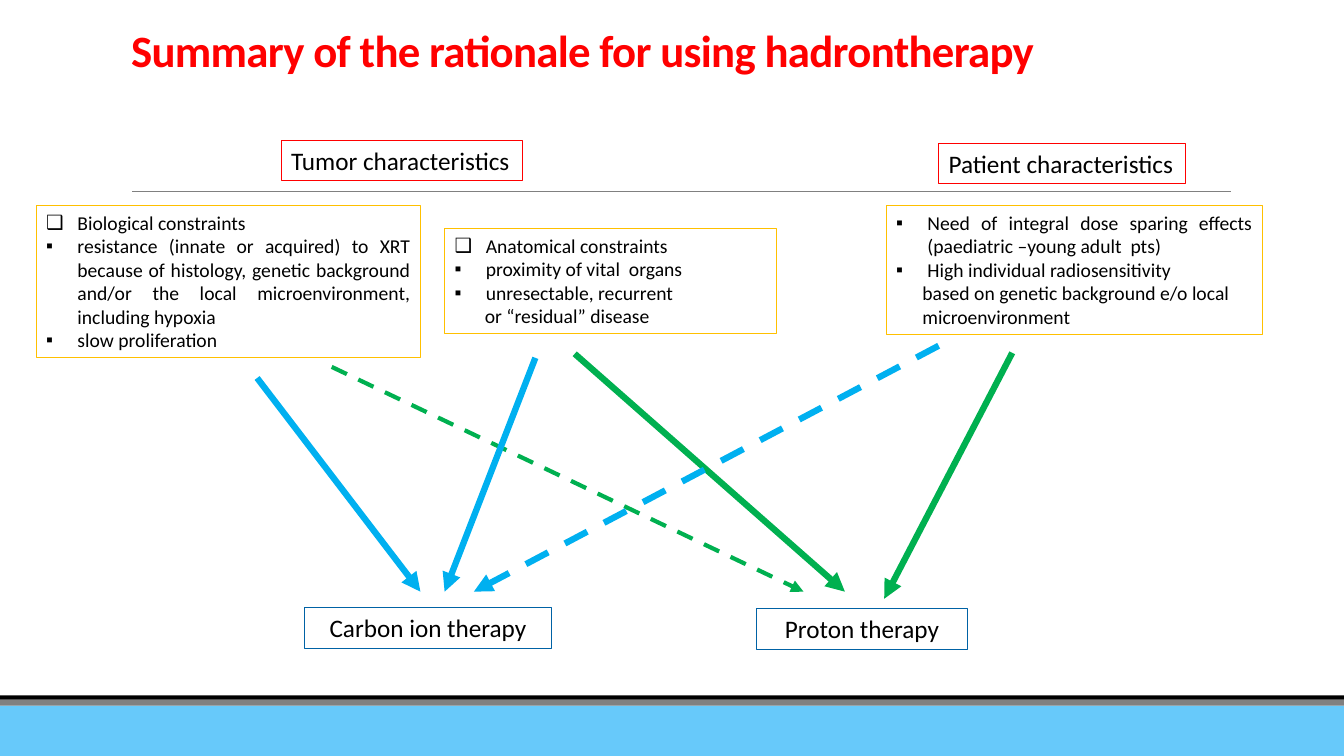
"""Build the slide on the rationale for using hadrontherapy."""
from dataclasses import dataclass

from lxml import etree
from pptx import Presentation
from pptx.dml.color import RGBColor
from pptx.enum.dml import MSO_LINE
from pptx.enum.shapes import MSO_CONNECTOR, MSO_SHAPE
from pptx.enum.text import MSO_ANCHOR, MSO_AUTO_SIZE, PP_ALIGN
from pptx.oxml.ns import qn
from pptx.util import Inches, Pt

RECTANGLE = MSO_SHAPE.RECTANGLE
STRAIGHT = MSO_CONNECTOR.STRAIGHT
DASH = MSO_LINE.DASH
LEFT, CENTER, JUSTIFY = PP_ALIGN.LEFT, PP_ALIGN.CENTER, PP_ALIGN.JUSTIFY
TOP, BOTTOM = MSO_ANCHOR.TOP, MSO_ANCHOR.BOTTOM
FIT_SHAPE, NO_FIT = MSO_AUTO_SIZE.SHAPE_TO_FIT_TEXT, MSO_AUTO_SIZE.NONE

FONT = "Calibri"
BLACK = RGBColor(0x00, 0x00, 0x00)
GRAY = RGBColor(0x80, 0x80, 0x80)
SKY = RGBColor(0x67, 0xC9, 0xFA)
RED = RGBColor(0xFF, 0x00, 0x00)
AMBER = RGBColor(0xFF, 0xC0, 0x00)
NAVY = RGBColor(0x00, 0x62, 0xA5)
PROTON_GREEN = RGBColor(0x00, 0xB0, 0x50)
CARBON_BLUE = RGBColor(0x00, 0xB0, 0xF0)
TOPIC, ITEM = "❑", "▪"
INDENT = 0.31


@dataclass(frozen=True)
class Line:
    text: str
    bullet: str = ""
    indent: float = 0


@dataclass(frozen=True)
class Box:
    left: float
    top: float
    width: float
    height: float
    outline: RGBColor
    lines: tuple[Line, ...]
    size: int = 18
    align: PP_ALIGN = LEFT
    wrap: bool = True


@dataclass(frozen=True)
class Band:
    top: float
    height: float
    color: RGBColor


@dataclass(frozen=True)
class Arrow:
    start: tuple[float, float]
    end: tuple[float, float]
    color: RGBColor
    weight: float = 4.5
    dashed: bool = False


BANDS = (Band(7, 0.5, SKY), Band(6.93, 0.07, GRAY), Band(6.9, 0.04, BLACK))

BOXES = (
    Box(4.41, 2.27, 3.29, 1.04, AMBER, (
        Line("Anatomical constraints", TOPIC, INDENT),
        Line("proximity of vital  organs", ITEM, INDENT),
        Line("unresectable, recurrent", ITEM, INDENT),
        Line("or “residual” disease", indent=0.3),
    ), 14, JUSTIFY),
    Box(0.36, 2.04, 3.81, 1.51, AMBER, (
        Line("Biological constraints", TOPIC, INDENT),
        Line("resistance (innate or acquired) to XRT because of histology, "
             "genetic background and/or the local microenvironment, "
             "including hypoxia", ITEM, INDENT),
        Line("slow proliferation", ITEM, INDENT),
    ), 14, JUSTIFY),
    Box(2.79, 1.39, 2.39, 0.4, RED, (Line("Tumor characteristics"),), wrap=False),
    Box(9.31, 1.42, 2.45, 0.4, RED, (Line("Patient characteristics"),), wrap=False),
    Box(8.79, 2.04, 3.73, 1.28, AMBER, (
        Line("Need of integral dose sparing effects "
             "(paediatric –young adult  pts)", ITEM, INDENT),
        Line("High individual radiosensitivity", ITEM, INDENT),
        Line("based on genetic background e/o local", indent=0.26),
        Line("microenvironment", indent=0.26),
    ), 14, JUSTIFY),
    Box(7.5, 6.04, 2.1, 0.4, NAVY, (Line("Proton therapy"),), align=CENTER),
    Box(3.02, 6.03, 2.45, 0.4, NAVY, (Line("Carbon ion therapy"),), align=CENTER),
)

ARROWS = (
    Arrow((5.7, 3.51), (8.38, 5.87), PROTON_GREEN),
    Arrow((10.04, 3.5), (8.77, 5.94), PROTON_GREEN),
    Arrow((3.29, 3.64), (7.97, 5.87), PROTON_GREEN, 3, True),
    Arrow((5.31, 3.55), (4.41, 5.87), CARBON_BLUE),
    Arrow((2.55, 3.75), (4.17, 5.87), CARBON_BLUE),
    Arrow((9.31, 3.43), (4.7, 5.87), CARBON_BLUE, 4.5, True),
)


def write(frame, lines: tuple[Line, ...], *, size: float, color: RGBColor = BLACK,
          bold: bool = False, align: PP_ALIGN = LEFT, anchor: MSO_ANCHOR = TOP,
          wrap: bool = True, fit: MSO_AUTO_SIZE = FIT_SHAPE,
          line_spacing: float = 1, tracking: float = 0) -> None:
    frame.word_wrap = wrap
    frame.auto_size = fit
    frame.vertical_anchor = anchor
    for index, line in enumerate(lines):
        paragraph = frame.paragraphs[0] if index == 0 else frame.add_paragraph()
        paragraph.alignment = align
        paragraph.line_spacing = line_spacing
        properties = paragraph._p.get_or_add_pPr()
        if line.indent:
            properties.set("marL", str(Inches(line.indent)))
        if line.bullet:
            properties.set("indent", str(-Inches(line.indent)))
            etree.SubElement(properties, qn("a:buFont")).set("typeface", "Arial")
            etree.SubElement(properties, qn("a:buChar")).set("char", line.bullet)
        run = paragraph.add_run()
        run.text = line.text
        run.font.name = FONT
        run.font.size = Pt(size)
        run.font.bold = bold
        run.font.color.rgb = color
        if tracking:
            run._r.get_or_add_rPr().set("spc", str(int(tracking * 100)))


def add_rectangle(slide, left: float, top: float, width: float, height: float):
    rectangle = slide.shapes.add_shape(
        RECTANGLE, Inches(left), Inches(top), Inches(width), Inches(height))
    rectangle.shadow.inherit = False
    return rectangle


def draw_band(slide, band: Band) -> None:
    stripe = add_rectangle(slide, 0, band.top, 13.33, band.height)
    stripe.fill.solid()
    stripe.fill.fore_color.rgb = band.color
    stripe.line.fill.background()


def draw_box(slide, box: Box) -> None:
    frame = add_rectangle(slide, box.left, box.top, box.width, box.height)
    frame.fill.background()
    frame.line.color.rgb = box.outline
    frame.line.width = Pt(0.75)
    write(frame.text_frame, box.lines, size=box.size, align=box.align, wrap=box.wrap)


def draw_line(slide, start: tuple[float, float], end: tuple[float, float],
              color: RGBColor, weight: float):
    connector = slide.shapes.add_connector(
        STRAIGHT, *(Inches(value) for value in start + end))
    connector.line.color.rgb = color
    connector.line.width = Pt(weight)
    etree.SubElement(connector._element.spPr, qn("a:effectLst"))
    return connector


def draw_arrow(slide, arrow: Arrow) -> None:
    connector = draw_line(slide, arrow.start, arrow.end, arrow.color, arrow.weight)
    if arrow.dashed:
        connector.line.dash_style = DASH
    outline = connector.line._get_or_add_ln()
    etree.SubElement(outline, qn("a:tailEnd")).set("type", "triangle")


def main() -> None:
    presentation = Presentation()
    presentation.slide_width = Inches(13.33)
    presentation.slide_height = Inches(7.5)
    slide = presentation.slides.add_slide(presentation.slide_layouts[5])
    title = slide.shapes.title
    title.left, title.top = Inches(1.2), Inches(-0.78)
    title.width, title.height = Inches(11), Inches(1.59)
    write(title.text_frame, (Line("Summary of the rationale for using hadrontherapy"),),
          size=32, color=RED, bold=True, anchor=BOTTOM, fit=NO_FIT,
          line_spacing=0.85, tracking=-0.5)
    for band in BANDS:
        draw_band(slide, band)
    draw_line(slide, (1.31, 1.9), (12.21, 1.9), GRAY, 0.5)
    for box in BOXES:
        draw_box(slide, box)
    for arrow in ARROWS:
        draw_arrow(slide, arrow)
    presentation.save("out.pptx")


if __name__ == "__main__":
    main()
